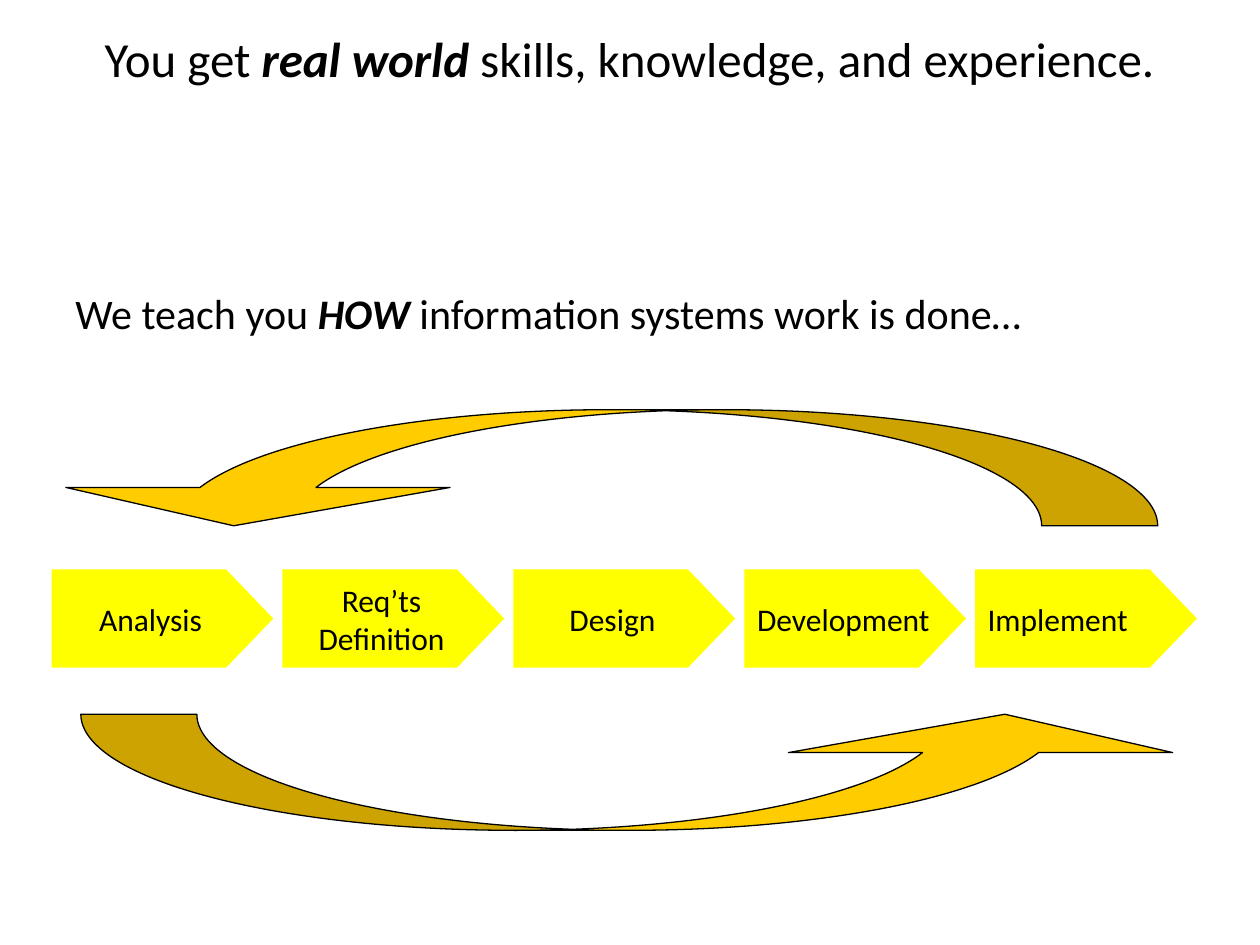
from pptx import Presentation
from pptx.dml.color import RGBColor
from pptx.enum.shapes import MSO_SHAPE
from pptx.enum.text import MSO_ANCHOR, MSO_AUTO_SIZE, PP_ALIGN
from pptx.util import Cm, Pt

PLATE, CURVED = MSO_SHAPE.PENTAGON, MSO_SHAPE.CURVED_DOWN_ARROW
TOP, MIDDLE = MSO_ANCHOR.TOP, MSO_ANCHOR.MIDDLE
LEFT, CENTER = PP_ALIGN.LEFT, PP_ALIGN.CENTER
FIXED = MSO_AUTO_SIZE.NONE
TITLE_ONLY = 5

BLACK, YELLOW, GOLD = "000000", "FFFF00", "FFCC00"
STAGES = [
    (["Analysis"], CENTER),
    (["Req’ts", "Definition"], CENTER),
    (["Design"], CENTER),
    (["Development"], CENTER),
    (["Implement"], LEFT),
]


def color(code):
    """Turn a hex string into a colour."""
    return RGBColor.from_string(code)


def apply(target, values):
    """Set each attribute of the target from a dict."""
    for name, value in values.items():
        setattr(target, name, value)


def place(shape, box):
    """Move and size a shape to a box in centimetres."""
    apply(shape, dict(zip(("left", "top", "width", "height"), map(Cm, box))))


def write(para, pieces, size, align):
    """Fill a paragraph with (text, emphasised) pieces."""
    para.alignment = align
    for text, strong in pieces:
        span = para.add_run()
        span.text = text
        apply(span.font, {"name": "Calibri", "size": Pt(size),
                          "bold": strong, "italic": strong})
        span.font.color.rgb = color(BLACK)


def add_heading(page, box):
    """Format the title placeholder."""
    title = page.shapes.title
    place(title, box)
    frame = title.text_frame
    apply(frame, {"auto_size": FIXED, "word_wrap": True,
                  "vertical_anchor": TOP, "margin_top": Cm(0.38)})
    write(frame.paragraphs[0],
          [("You get ", False), ("real world ", True),
           ("skills, knowledge, and experience.", False)], 28, CENTER)


def add_statement(page, box):
    """Add the sentence above the process diagram."""
    frame = page.shapes.add_textbox(*map(Cm, box)).text_frame
    apply(frame, {"auto_size": FIXED, "word_wrap": True,
                  "vertical_anchor": TOP, "margin_top": Cm(1.35)})
    write(frame.paragraphs[0],
          [("We teach you ", False), ("HOW ", True),
           ("information systems work is done…", False)], 24, LEFT)


def add_stages(page, box):
    """Spread the process stages evenly over the box."""
    left, top, width, height = box
    plate_width = 4.47
    pitch = (width - plate_width) / (len(STAGES) - 1)
    for index, (lines, align) in enumerate(STAGES):
        plate_box = (left + index * pitch, top, plate_width, height)
        plate = page.shapes.add_shape(PLATE, *map(Cm, plate_box))
        plate.shadow.inherit = False
        plate.adjustments[0] = 0.48
        plate.fill.solid()
        plate.fill.fore_color.rgb = color(YELLOW)
        plate.line.fill.background()
        frame = plate.text_frame
        apply(frame, {"word_wrap": False, "vertical_anchor": MIDDLE})
        for number, line in enumerate(lines):
            para = frame.add_paragraph() if number else frame.paragraphs[0]
            write(para, [(line, False)], 18, align)


def add_loop_arrow(page, box, flip):
    """Add a curved arrow mirrored along the given flip attribute."""
    arrow = page.shapes.add_shape(CURVED, *map(Cm, box))
    arrow.shadow.inherit = False
    for index, value in enumerate((1.66, 3.31, 0.33)):
        arrow.adjustments[index] = value
    arrow.fill.solid()
    arrow.fill.fore_color.rgb = color(GOLD)
    arrow.line.color.rgb = color(BLACK)
    arrow.line.width = Pt(0.75)
    arrow.element.spPr.xfrm.set(flip, "1")


def main():
    """Build the slide and save the deck."""
    deck = Presentation()
    apply(deck, {"slide_width": Cm(25.4), "slide_height": Cm(19.05)})
    page = deck.slides.add_slide(deck.slide_layouts[TITLE_ONLY])
    add_heading(page, (0.84, 0.2, 23.7, 3.18))
    add_statement(page, (1.27, 4.45, 22.86, 12.57))
    add_stages(page, (1.04, 11.48, 23.09, 1.98))
    add_loop_arrow(page, (0.84, 8.26, 22.5, 2.34), "flipH")
    add_loop_arrow(page, (1.63, 14.4, 22.5, 2.34), "flipV")
    deck.save("out.pptx")


if __name__ == "__main__":
    main()
